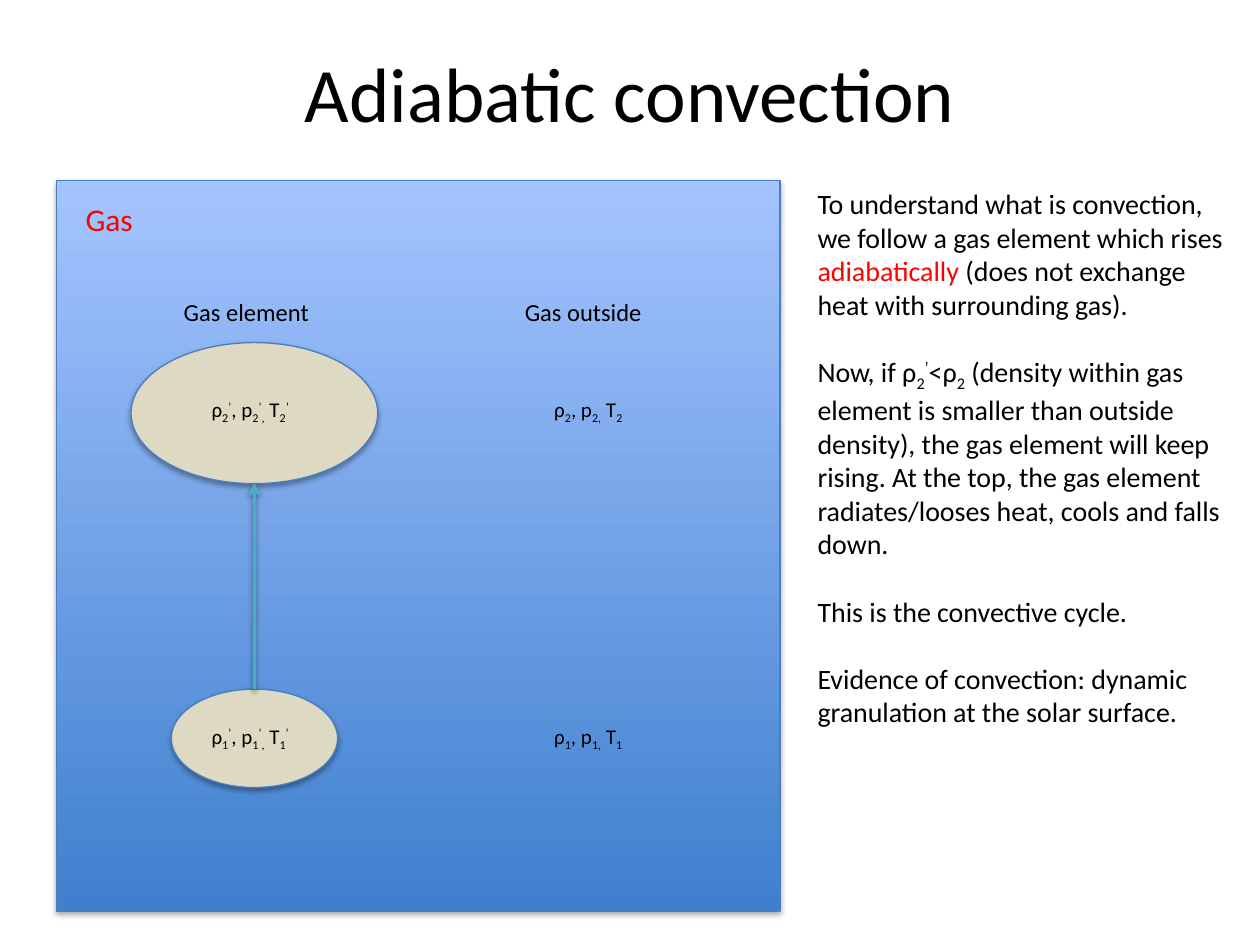
"""Build the adiabatic convection slide."""
from dataclasses import dataclass

import lxml.etree
import pptx
import pptx.dml.color
import pptx.enum.shapes
import pptx.enum.text
import pptx.oxml.ns
import pptx.util

Pt = pptx.util.Pt
Align = pptx.enum.text.PP_ALIGN
Anchor = pptx.enum.text.MSO_ANCHOR
Shape = pptx.enum.shapes.MSO_SHAPE
qn = pptx.oxml.ns.qn

FONT = "Calibri"
BLACK, RED = "000000", "FF0000"
OUTLINE, ELEMENT_FILL, ARROW = "4B7EBC", "DDD9C3", "4BACC6"
SUB, SUPER = -25, 30


@dataclass(frozen=True)
class Span:
    text: str
    base: int = 0
    color: str = BLACK


@dataclass(frozen=True)
class Box:
    left: float
    top: float
    width: float
    height: float


@dataclass(frozen=True)
class Label:
    box: Box
    size: float
    paragraphs: list[list[Span]]
    align: Align = Align.LEFT
    anchor: Anchor = Anchor.TOP
    gap: float = 0


@dataclass(frozen=True)
class Level:
    index: str
    element: Box
    text_top: float
    text_width: float


def rgb(color: str) -> pptx.dml.color.RGBColor:
    return pptx.dml.color.RGBColor.from_string(color)


def emu(box: Box) -> list[int]:
    return [Pt(length) for length in (box.left, box.top, box.width, box.height)]


def add_shadow(effects, opacity: int, distance: float) -> None:
    shadow = lxml.etree.SubElement(
        effects, qn("a:outerShdw"), blurRad=str(Pt(3.1)), dist=str(Pt(distance)),
        dir="5400000", rotWithShape="0")
    color = lxml.etree.SubElement(shadow, qn("a:srgbClr"), val=BLACK)
    lxml.etree.SubElement(color, qn("a:alpha"), val=str(opacity * 1000))


def add_body(slide, kind: Shape, box: Box):
    body = slide.shapes.add_shape(kind, *emu(box))
    body.line.color.rgb = rgb(OUTLINE)
    body.line.width = Pt(0.75)
    body.shadow.inherit = False
    add_shadow(body.element.spPr.find(qn("a:effectLst")), 35, 1.8)
    return body


def add_gas(slide, box: Box) -> None:
    gas = add_body(slide, Shape.RECTANGLE, box)
    gas.fill.gradient()
    gas.fill.gradient_angle = 90
    for stop, color in zip(gas.fill.gradient_stops, ("3F80CE", "A4C4FF")):
        stop.color.rgb = rgb(color)


def add_element(slide, box: Box) -> None:
    element = add_body(slide, Shape.OVAL, box)
    element.fill.solid()
    element.fill.fore_color.rgb = rgb(ELEMENT_FILL)


def add_rise(slide, lower: Box, upper: Box) -> None:
    center = Pt(lower.left + lower.width / 2)
    rise = slide.shapes.add_connector(
        pptx.enum.shapes.MSO_CONNECTOR.STRAIGHT,
        center, Pt(lower.top), center, Pt(upper.top + upper.height))
    rise.line.color.rgb = rgb(ARROW)
    rise.line.width = Pt(2)
    properties = rise.element.spPr
    lxml.etree.SubElement(properties.find(qn("a:ln")), qn("a:tailEnd"), type="arrow")
    add_shadow(lxml.etree.SubElement(properties, qn("a:effectLst")), 38, 1.6)


def add_label(slide, label: Label) -> None:
    frame = slide.shapes.add_textbox(*emu(label.box)).text_frame
    frame.word_wrap = True
    frame.vertical_anchor = label.anchor
    for number, spans in enumerate(label.paragraphs):
        paragraph = frame.add_paragraph() if number else frame.paragraphs[0]
        paragraph.alignment = label.align
        paragraph.space_before = Pt(label.gap if number else 0)
        for span in spans:
            run = paragraph.add_run()
            run.text = span.text
            run.font.name = FONT
            run.font.size = Pt(label.size)
            run.font.color.rgb = rgb(span.color)
            if span.base:
                run.font._element.set("baseline", str(span.base * 1000))


def state(index: str, inside: bool) -> list[Span]:
    mark = [Span(index, SUB)] + ([Span("’", SUPER)] if inside else [])
    return [Span("ρ"), *mark, Span(", p"), *mark, Span(",", SUB), Span(" T"), *mark]


def main() -> None:
    deck = pptx.Presentation()
    deck.slide_width, deck.slide_height = Pt(720), Pt(540)
    slide = deck.slides.add_slide(deck.slide_layouts[6])

    lower = Level("1", Box(97.9, 393.8, 95, 56.2), 409.7, 62.6)
    upper = Level("2", Box(74.9, 195.8, 141, 80.6), 223.2, 65.5)
    explanation = [
        [Span("To understand what is convection, we follow a gas element which rises "),
         Span("adiabatically", color=RED),
         Span(" (does not exchange heat with surrounding gas).")],
        [Span("Now, if ρ"), Span("2", SUB), Span("’", SUPER), Span("<ρ"), Span("2", SUB),
         Span(" (density within gas element is smaller than outside density), the gas "
              "element will keep rising. At the top, the gas element radiates/looses "
              "heat, cools and falls down.")],
        [Span("This is the convective cycle.")],
        [Span("Evidence of convection: dynamic granulation at the solar surface.")],
    ]

    add_label(slide, Label(Box(36, 7.2, 648, 90), 44, [[Span("Adiabatic convection")]],
                           Align.CENTER, Anchor.MIDDLE))
    add_gas(slide, Box(32.4, 103, 413.3, 417.6))
    add_label(slide, Label(Box(41.8, 110.9, 89.3, 28.8), 18, [[Span("Gas", color=RED)]]))
    for level in (lower, upper):
        add_element(slide, level.element)
    add_rise(slide, lower.element, upper.element)
    for level in (lower, upper):
        for left, inside in ((113.8, True), (309.6, False)):
            box = Box(left, level.text_top, level.text_width, 21.6)
            add_label(slide, Label(box, 12, [state(level.index, inside)]))
    for left, heading, align in ((97.9, "Gas element", Align.LEFT),
                                 (285.8, "Gas outside", Align.CENTER)):
        add_label(slide, Label(Box(left, 166.3, 95, 24.5), 14, [[Span(heading)]], align))
    add_label(slide, Label(Box(460.1, 103, 252.7, 317.5), 16, explanation, gap=19.2))

    deck.save("out.pptx")


if __name__ == "__main__":
    main()
